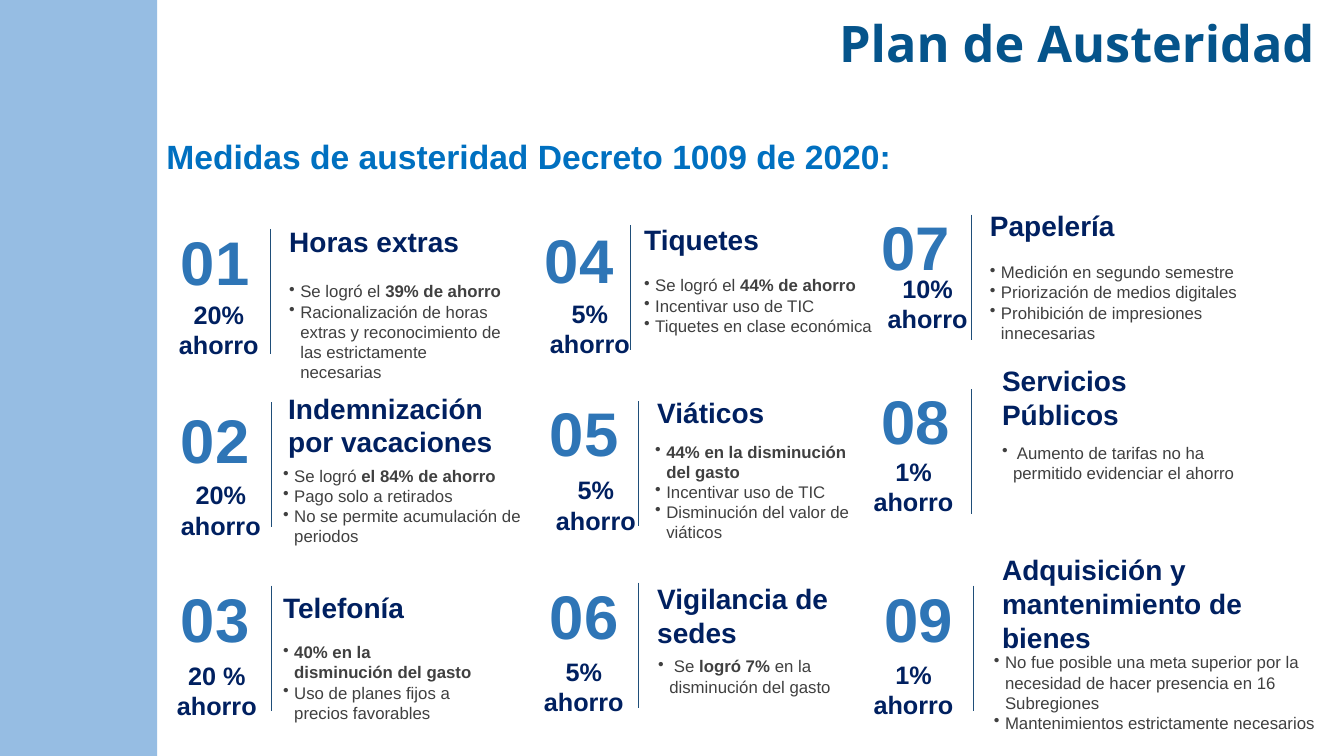
import pptx
import pptx.util
import pptx.dml.color
import pptx.enum.shapes
import pptx.enum.text
import pptx.oxml.ns
import lxml.etree

Inches, Pt = pptx.util.Inches, pptx.util.Pt
ALIGN = pptx.enum.text.PP_ALIGN
ANCHOR = pptx.enum.text.MSO_ANCHOR

THEME = {
    "side": "96BDE3",
    "rule": "1F4E79",
    "title": {"size": Pt(36), "name": "Open Sans", "bold": True, "color": "05548B"},
    "lead": {"size": Pt(24), "name": "Arial", "bold": True, "color": "0070C0"},
    "number": {"size": Pt(44), "name": "Arial", "bold": True, "color": "2E75B6"},
    "head": {"size": Pt(20), "name": "Arial", "bold": True, "color": "002060"},
    "saving": {"size": Pt(18), "name": "Arial", "bold": True, "color": "002060"},
    "list": {"size": Pt(12), "name": "Arial", "bold": False, "color": "404040"},
}

MEASURES = [
    {"no": "01", "at": (1.6, 2.17), "rule": (1.08, 0.1), "saving": (0.06, 0.75, "20%"),
     "head": (1.17, 0, 2.15, 0.44, "Horas extras"),
     "list": (1.17, 0.57, 2.41, 1.11, [
         "Se logró el *39% de ahorro*",
         "Racionalización de horas extras y reconocimiento de las estrictamente necesarias"])},
    {"no": "02", "at": (1.6, 3.94), "rule": (1.09, 0.05), "saving": (0.08, 0.77, "20%"),
     "head": (1.16, -0.28, 2.61, 1.11, "Indemnización por vacaciones"),
     "list": (1.11, 0.63, 3, 0.91, [
         "Se logró *el 84% de ahorro*", "Pago solo a retirados",
         "No se permite acumulación de periodos"])},
    {"no": "03", "at": (1.6, 5.71), "rule": (1.09, 0.1), "saving": (0.04, 0.79, "20 %"),
     "head": (1.11, 0.09, 2.53, 0.44, "Telefonía"),
     "list": (1.11, 0.61, 2.08, 0.71, [
         "*40% en la disminución del gasto*", "Uso de planes fijos a precios favorables"])},
    {"no": "04", "at": (5.21, 2.15), "rule": (1.04, 0.08), "saving": (0.13, 0.76, "5%"),
     "head": (1.08, 0, 2.32, 0.44, "Tiquetes"),
     "list": (1.08, 0.53, 2.58, 0.91, [
         "Se logró el *44% de ahorro*", "Incentivar uso de TIC",
         "Tiquetes en clase económica"])},
    {"no": "05", "at": (5.26, 3.87), "rule": (1.07, 0.11), "saving": (0.14, 0.79, "5%"),
     "head": (1.16, 0, 2.15, 0.44, "Viáticos"),
     "list": (1.14, 0.46, 2.15, 1.11, [
         "*44% en la disminución del gasto*", "Incentivar uso de TIC",
         "Disminución del valor de viáticos"])},
    {"no": "06", "at": (5.26, 5.68), "rule": (1.07, 0.1), "saving": (0.02, 0.78, "5%"),
     "head": (1.16, 0.04, 2.15, 0.77, "Vigilancia de sedes"),
     "list": (1.17, 0.78, 2.15, 0.5, [" Se *logró 7% *en la disminución del gasto"])},
    {"no": "07", "at": (8.55, 2.02), "rule": (1.08, 0.11), "saving": (0.14, 0.64, "10%"),
     "head": (1.17, 0, 2.15, 0.44, "Papelería"),
     "list": (1.17, 0.53, 2.67, 0.91, [
         "Medición en segundo semestre", "Priorización de medios digitales",
         "Prohibición de impresiones innecesarias"])},
    {"no": "08", "at": (8.55, 3.75), "rule": (1.08, 0.11), "saving": (0, 0.73, "1%"),
     "head": (1.29, -0.03, 2.67, 0.44, "Servicios Públicos"),
     "list": (1.29, 0.59, 2.67, 0.5, [
         " Aumento de tarifas no ha permitido evidenciar el ahorro"])},
    {"no": "09", "at": (8.58, 5.71), "rule": (1.07, 0.1), "saving": (-0.03, 0.78, "1%"),
     "head": (1.26, -0.28, 3.42, 1.11, "Adquisición y mantenimiento de bienes"),
     "list": (1.18, 0.71, 3.88, 1.31, [
         "No fue posible una meta superior por la necesidad de hacer presencia en 16 Subregiones",
         "Mantenimientos estrictamente necesarios"])},
]


def rgb(code):
    """Turn a hex code into a colour."""
    return pptx.dml.color.RGBColor.from_string(code)


def style(font, look):
    """Apply a theme style to a font."""
    for key, value in look.items():
        if key == "color":
            font.color.rgb = rgb(value)
        else:
            setattr(font, key, value)


def place(shape, box):
    """Move a shape to a box given in inches."""
    for key, value in zip(("left", "top", "width", "height"), box):
        setattr(shape, key, Inches(value))


def bullet(para, dot):
    """Set the hanging bullet of a paragraph, or clear it."""
    props = para._p.get_or_add_pPr()
    indent = Inches(0.11) if dot else 0
    props.set("marL", str(indent))
    props.set("indent", str(-indent))
    tag = pptx.oxml.ns.qn("a:buChar" if dot else "a:buNone")
    mark = lxml.etree.SubElement(props, tag)
    if dot:
        mark.set("char", "•")


def write(shape, lines, look, align=ALIGN.LEFT, anchor=ANCHOR.TOP, dot=False):
    """Fill a shape with lines, where asterisks enclose bold words."""
    frame = shape.text_frame
    form = {"word_wrap": True, "auto_size": pptx.enum.text.MSO_AUTO_SIZE.NONE,
            "vertical_anchor": anchor}
    for key, value in form.items():
        setattr(frame, key, value)
    for spot, line in enumerate(lines):
        para = frame.add_paragraph() if spot else frame.paragraphs[0]
        bullet(para, dot)
        para.alignment = align
        para.space_before = Pt(0)
        for turn, words in enumerate(line.split("*")):
            if words:
                run = para.add_run()
                run.text = words
                style(run.font, look)
                if turn % 2:
                    run.font.bold = True


def label(slide, box, lines, kind, **form):
    """Add a text box in a theme style."""
    shape = slide.shapes.add_textbox(*map(Inches, box))
    write(shape, lines, THEME[kind], **form)
    return shape


def side(slide, box):
    """Draw the coloured side band."""
    kind = pptx.enum.shapes.MSO_SHAPE.RECTANGLE
    band = slide.shapes.add_shape(kind, *map(Inches, box))
    band.shadow.inherit = False
    band.fill.solid()
    band.fill.fore_color.rgb = rgb(THEME["side"])
    band.line.fill.background()


def header(slide, box):
    """Place the title and the lead line in the header box."""
    x, y, w, h = box
    title, lead = slide.placeholders
    place(title, (x + w - 7.66, y, 7.66, 0.71))
    write(title, ["Plan de Austeridad"], THEME["title"], align=ALIGN.RIGHT)
    place(lead, (x, y + h - 0.5, 8.02, 0.5))
    write(lead, ["Medidas de austeridad Decreto 1009 de 2020:"], THEME["lead"])


def divide(slide, x, y):
    """Draw the thin upright line of a measure."""
    kind = pptx.enum.shapes.MSO_CONNECTOR.STRAIGHT
    ends = map(Inches, (x, y, x, y + 1.24))
    line = slide.shapes.add_connector(kind, *ends)
    line.line.color.rgb = rgb(THEME["rule"])
    line.line.width = Pt(0.5)
    props = line._element.spPr
    lxml.etree.SubElement(props, pptx.oxml.ns.qn("a:effectLst"))


def measure(slide, item):
    """Place number, saving, line, heading and list of a measure."""
    x, y = item["at"]
    number = label(slide, (x, y, 1.07, 0.85), [item["no"]], "number", align=ALIGN.CENTER)
    number.text_frame.margin_left = number.text_frame.margin_right = Inches(0.12)
    dx, dy, rate = item["saving"]
    label(slide, (x + dx, y + dy, 1.02, 0.71), [rate, "ahorro"], "saving", align=ALIGN.CENTER)
    dx, dy = item["rule"]
    divide(slide, x + dx, y + dy)
    dx, dy, w, h, text = item["head"]
    label(slide, (x + dx, y + dy, w, h), [text], "head", anchor=ANCHOR.MIDDLE)
    dx, dy, w, h, lines = item["list"]
    label(slide, (x + dx, y + dy, w, h), lines, "list", dot=True)


def main():
    """Build the slide and save it."""
    deck = pptx.Presentation()
    deck.slide_width, deck.slide_height = Inches(13.33), Inches(7.5)
    slide = deck.slides.add_slide(deck.slide_layouts[1])
    side(slide, (0, 0, 1.56, 7.5))
    header(slide, (1.55, 0.07, 11.59, 1.73))
    for item in MEASURES:
        measure(slide, item)
    deck.save("out.pptx")


if __name__ == "__main__":
    main()
